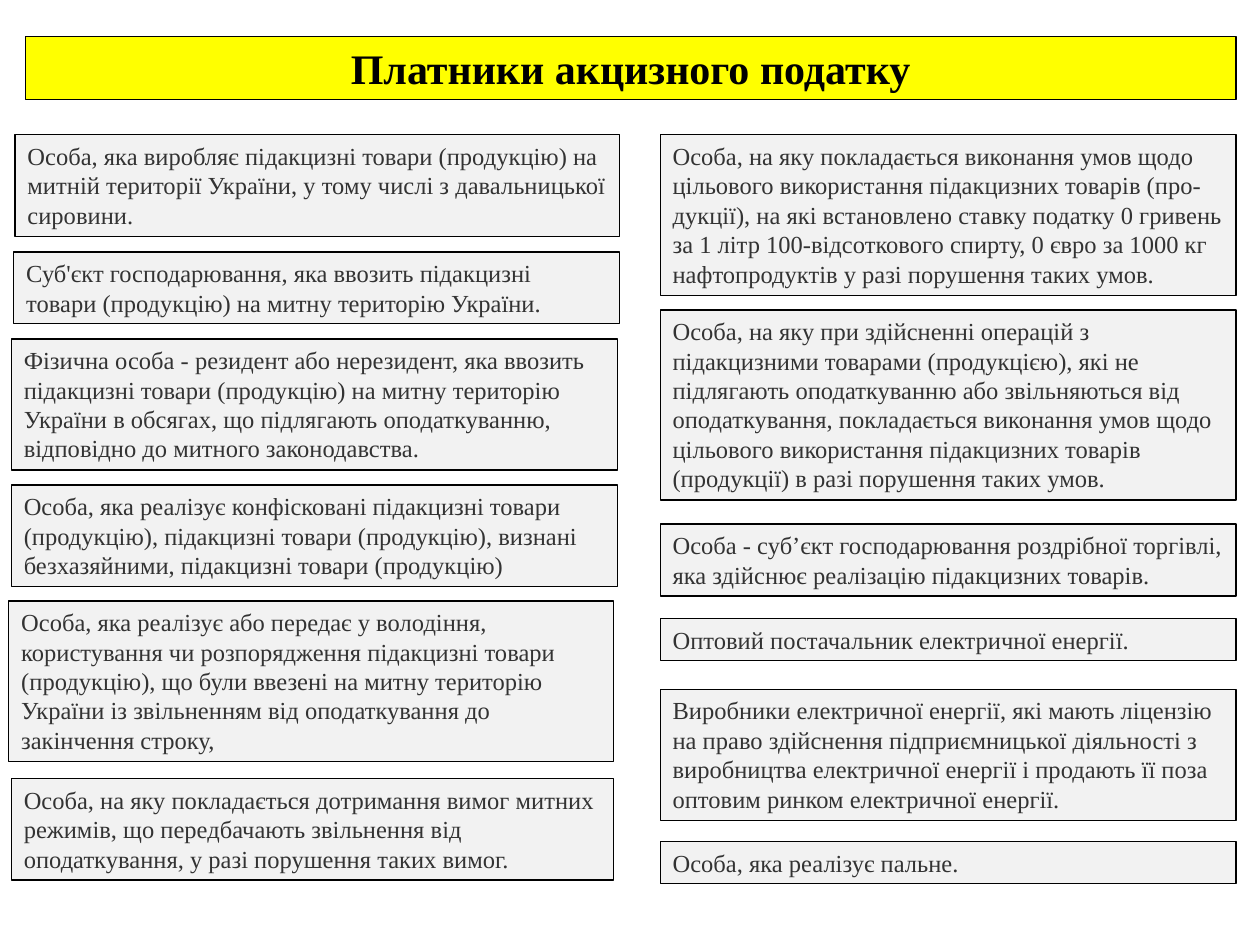
from dataclasses import dataclass

from pptx import Presentation
from pptx.dml.color import RGBColor
from pptx.enum.shapes import MSO_SHAPE
from pptx.enum.text import MSO_ANCHOR, MSO_AUTO_SIZE, PP_ALIGN
from pptx.util import Inches, Pt

RECTANGLE = MSO_SHAPE.RECTANGLE
TOP = MSO_ANCHOR.TOP
GROW = MSO_AUTO_SIZE.SHAPE_TO_FIT_TEXT
LEFT, CENTER = PP_ALIGN.LEFT, PP_ALIGN.CENTER


@dataclass(frozen=True)
class Theme:
    font: str = "Times New Roman"
    title_size: int = 24
    body_size: int = 14
    title_fill: str = "FFFF00"
    title_text: str = "000000"
    body_fill: str = "F2F2F2"
    body_text: str = "333333"
    border: str = "000000"
    border_width: float = 0.75


THEME = Theme()

# A payer box is as tall as its lines of text plus the insets
LINE_HEIGHT = 0.235
INSETS = 0.1

# Left column: left, top, width, lines, text
LEFT_PAYERS = [
    (0.12, 1.07, 4.8, 3,
     "Особа, яка виробляє підакцизні товари (продукцію) на митній території "
     "України, у тому числі з давальницької сировини."),
    (0.11, 2, 4.81, 2,
     "Суб'єкт господарювання, яка ввозить підакцизні товари (продукцію) на "
     "митну територію України."),
    (0.09, 2.69, 4.81, 4,
     "Фізична особа - резидент або нерезидент, яка ввозить підакцизні товари "
     "(продукцію) на митну територію України в обсягах, що підлягають "
     "оподаткуванню, відповідно до митного законодавства."),
    (0.09, 3.85, 4.81, 3,
     "Особа, яка реалізує конфісковані підакцизні товари (продукцію), "
     "підакцизні товари (продукцію), визнані безхазяйними, підакцизні товари "
     "(продукцію)"),
    (0.07, 4.77, 4.8, 5,
     "Особа, яка реалізує або передає у володіння, користування чи "
     "розпорядження підакцизні товари (продукцію), що були ввезені на митну "
     "територію України із звільненням від оподаткування до закінчення строку,"),
    (0.09, 6.18, 4.78, 3,
     "Особа, на яку покладається дотримання вимог митних режимів, що "
     "передбачають звільнення від оподаткування, у разі порушення таких вимог."),
]

# Right column: top, lines, text
RIGHT_LEFT, RIGHT_WIDTH = 5.24, 4.57
RIGHT_PAYERS = [
    (1.07, 5,
     "Особа, на яку покладається виконання умов щодо цільового використання "
     "підакцизних товарів (про-дукції), на які встановлено ставку податку "
     "0 гривень за 1 літр 100-відсоткового спирту, 0 євро за 1000 кг "
     "нафтопродуктів у разі порушення таких умов."),
    (2.46, 6,
     "Особа, на яку при здійсненні операцій з підакцизними товарами "
     "(продукцією), які не підлягають оподаткуванню або звільняються від "
     "оподаткування, покладається виконання умов щодо цільового використання "
     "підакцизних товарів (продукції) в разі порушення таких умов."),
    (4.16, 2,
     "Особа - суб’єкт господарювання роздрібної торгівлі, яка здійснює "
     "реалізацію підакцизних товарів."),
    (4.91, 1, "Оптовий постачальник електричної енергії."),
    (5.47, 4,
     "Виробники електричної енергії, які мають ліцензію на право здійснення "
     "підприємницької діяльності з виробництва електричної енергії і продають "
     "її поза оптовим ринком електричної енергії."),
    (6.68, 1, "Особа, яка реалізує пальне."),
]


def add_box(slide, left, top, width, height, text, fill, color, size, align, bold):
    box = slide.shapes.add_shape(
        RECTANGLE, Inches(left), Inches(top), Inches(width), Inches(height))
    box.shadow.inherit = False
    box.fill.solid()
    box.fill.fore_color.rgb = RGBColor.from_string(fill)
    box.line.color.rgb = RGBColor.from_string(THEME.border)
    box.line.width = Pt(THEME.border_width)

    frame = box.text_frame
    frame.word_wrap = True
    frame.auto_size = GROW
    frame.vertical_anchor = TOP
    frame.text = text
    paragraph = frame.paragraphs[0]
    paragraph.alignment = align
    font = paragraph.runs[0].font
    font.name = THEME.font
    font.size = Pt(size)
    font.bold = bold
    font.color.rgb = RGBColor.from_string(color)


def add_title(slide, text):
    add_box(slide, 0.2, 0.29, 9.61, 0.5, text, THEME.title_fill,
            THEME.title_text, THEME.title_size, CENTER, True)


def add_payer(slide, left, top, width, lines, text):
    add_box(slide, left, top, width, INSETS + lines * LINE_HEIGHT, text,
            THEME.body_fill, THEME.body_text, THEME.body_size, LEFT, False)


def main():
    prs = Presentation()
    prs.slide_width, prs.slide_height = Inches(10), Inches(7.5)
    slide = prs.slides.add_slide(prs.slide_layouts[6])

    # Heading
    add_title(slide, "Платники акцизного податку")

    # Two columns of taxpayers
    for left, top, width, lines, text in LEFT_PAYERS:
        add_payer(slide, left, top, width, lines, text)
    for top, lines, text in RIGHT_PAYERS:
        add_payer(slide, RIGHT_LEFT, top, RIGHT_WIDTH, lines, text)

    prs.save("out.pptx")


if __name__ == "__main__":
    main()
